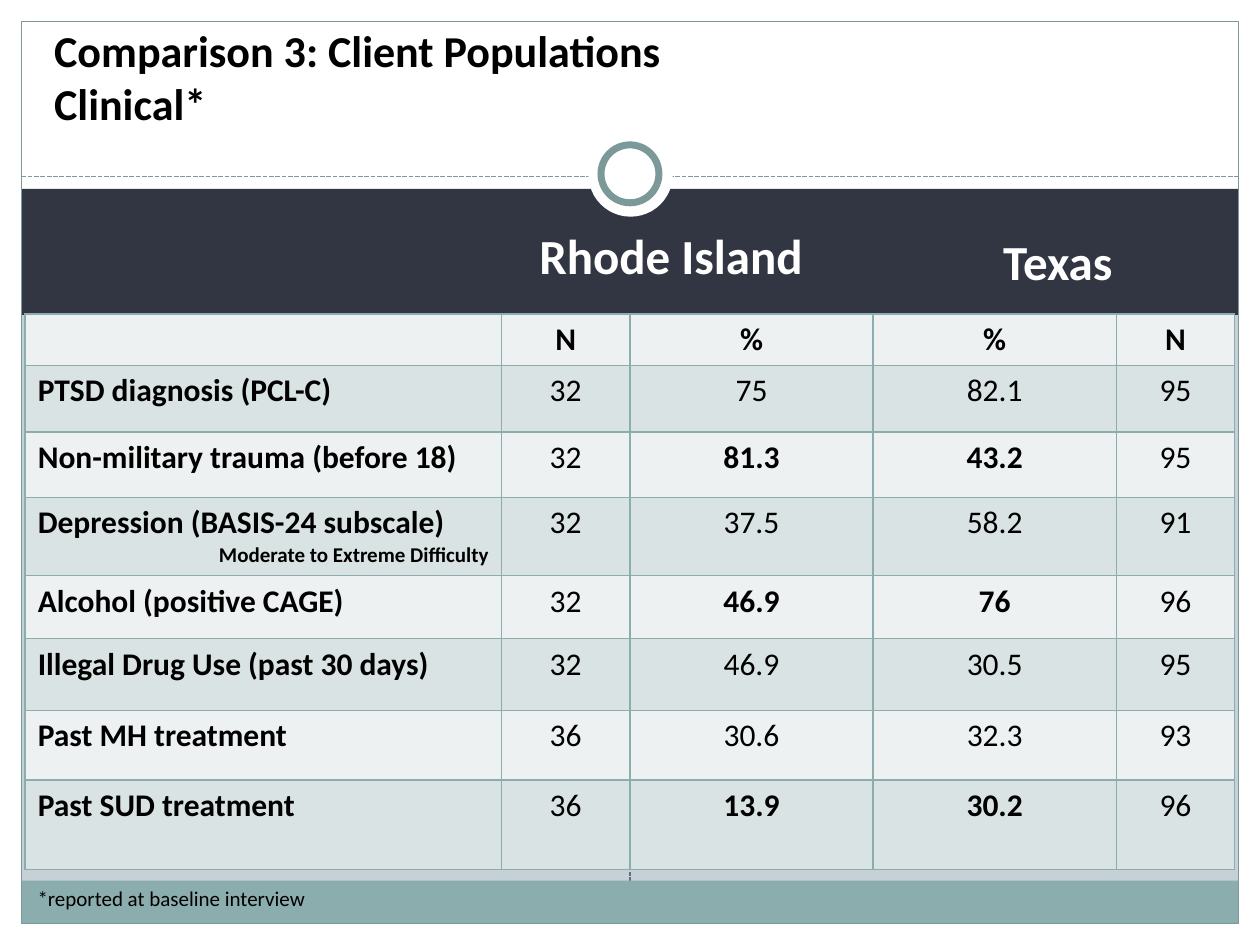
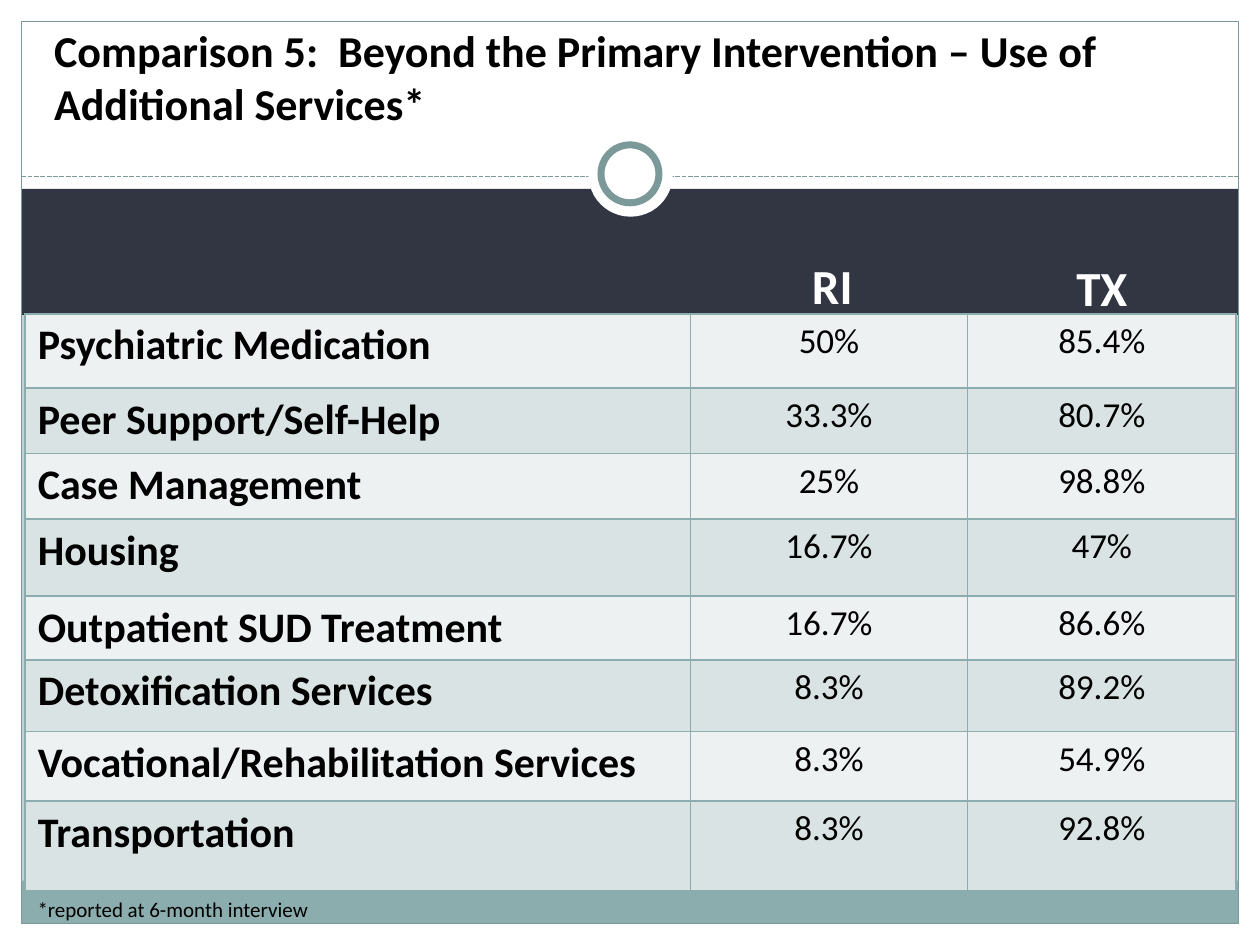
import dataclasses

import lxml.etree
import pptx
import pptx.dml.color
import pptx.enum.dml
import pptx.enum.shapes
import pptx.enum.text
import pptx.oxml.ns
import pptx.util

Inches = pptx.util.Inches
Pt = pptx.util.Pt
Shape = pptx.enum.shapes.MSO_SHAPE
Align = pptx.enum.text.PP_ALIGN
Anchor = pptx.enum.text.MSO_ANCHOR
AutoSize = pptx.enum.text.MSO_AUTO_SIZE
qn = pptx.oxml.ns.qn


@dataclasses.dataclass(frozen=True)
class Theme:
    font: str = "Calibri"
    background: str = "C5D1D7"
    white: str = "FFFFFF"
    ink: str = "000000"
    header: str = "323643"
    footer: str = "8CADAE"
    frame: str = "7C999A"
    divider: str = "646B86"
    bands: tuple = ("EEF1F2", "DAE3E3")
    title_size: float = 25.2
    heading_size: float = 28
    note_size: float = 12


def rgb(value):
    return pptx.dml.color.RGBColor.from_string(value)


def write(paragraph, text, *, font, size, color, bold=False, align=Align.LEFT):
    """Fill one paragraph; a newline in the text becomes a line break."""
    paragraph.text = text
    paragraph.alignment = align
    for run in paragraph.runs:
        run.font.name = font
        run.font.size = Pt(size)
        run.font.bold = bold
        run.font.color.rgb = rgb(color)


class Deck:
    """The style, the presentation and the slide being built."""

    MARGIN, WIDTH, HEIGHT = 0.17, 10, 7.5

    def __init__(self, theme):
        self.theme = theme
        self.prs = pptx.Presentation()
        self.prs.slide_width = Inches(self.WIDTH)
        self.prs.slide_height = Inches(self.HEIGHT)
        backdrop = self.prs.slide_master.background.fill
        backdrop.solid()
        backdrop.fore_color.rgb = rgb(theme.background)
        self.slide = None

    def new_slide(self):
        self.slide = self.prs.slides.add_slide(
            self.prs.slide_layouts.get_by_name("Comparison"))
        # Only the title and the two column headings are used
        for holder in list(self.slide.placeholders):
            if holder.placeholder_format.idx in (2, 4):
                holder.element.getparent().remove(holder.element)
        self.frame()

    def shape(self, kind, left, top, width, height, fill=None, line=None, weight=0.75):
        shape = self.slide.shapes.add_shape(
            kind, Inches(left), Inches(top), Inches(width), Inches(height))
        shape.shadow.inherit = False
        if fill:
            shape.fill.solid()
            shape.fill.fore_color.rgb = rgb(fill)
        else:
            shape.fill.background()
        if line:
            shape.line.color.rgb = rgb(line)
            shape.line.width = Pt(weight)
        else:
            shape.line.fill.background()
        return shape

    def dashed_line(self, x1, y1, x2, y2, color, weight):
        line = self.slide.shapes.add_connector(
            pptx.enum.shapes.MSO_CONNECTOR.STRAIGHT,
            Inches(x1), Inches(y1), Inches(x2), Inches(y2))
        line.line.color.rgb = rgb(color)
        line.line.width = Pt(weight)
        line.line.dash_style = pptx.enum.dml.MSO_LINE.SQUARE_DOT
        lxml.etree.SubElement(line.element.spPr, qn("a:effectLst"))
        return line

    def frame(self):
        """Margins, bands, border and ring that every slide shares."""
        theme, edge = self.theme, self.MARGIN
        right, bottom = self.WIDTH - edge, self.HEIGHT - edge
        inner = self.WIDTH - 2 * edge
        divider = self.dashed_line(5, 6.99, 5, 2.41, theme.divider, 0.75)
        # White title area and margins
        for box in ((0, 0, self.WIDTH, 1.58), (0, bottom, self.WIDTH, edge),
                    (0, 0, edge, self.HEIGHT), (right, 0, edge, self.HEIGHT)):
            self.shape(Shape.RECTANGLE, *box, fill=theme.white)
        # Coloured bands
        self.shape(Shape.RECTANGLE, edge, 1.5, inner, 1, fill=theme.header)
        footer = self.shape(Shape.RECTANGLE, edge, 6.99, inner, 0.34, fill=theme.footer)
        divider.begin_connect(footer, 0)
        # Border and ring
        self.dashed_line(edge, 1.4, right, 1.4, theme.frame, 0.9)
        self.shape(Shape.RECTANGLE, edge, edge, inner, bottom - edge, line=theme.frame)
        self.shape(Shape.OVAL, 4.67, 1.05, 0.67, 0.67, fill=theme.white)
        self.shape(Shape.OVAL, 4.77, 1.15, 0.46, 0.46,
                   fill=theme.white, line=theme.frame, weight=4)

    def placeholder(self, idx, text, box, anchor, **style):
        holder = next(p for p in self.slide.placeholders
                      if p.placeholder_format.idx == idx)
        holder.left, holder.top, holder.width, holder.height = map(Inches, box)
        holder.element.getparent().append(holder.element)  # above the frame
        holder.text_frame.auto_size = AutoSize.NONE
        holder.text_frame.vertical_anchor = anchor
        write(holder.text_frame.paragraphs[0], text,
              font=self.theme.font, bold=True, **style)

    def title(self, text):
        self.placeholder(0, text, (0.33, 0.25, 9.33, 0.83), Anchor.BOTTOM,
                         size=self.theme.title_size, color=self.theme.ink)

    def headings(self, *headings):
        for idx, (text, box) in zip((1, 3), headings):
            self.placeholder(idx, text, box, Anchor.MIDDLE, align=Align.CENTER,
                             size=self.theme.heading_size, color=self.theme.white)

    def footnote(self, text, top, width):
        note = self.slide.shapes.add_textbox(
            Inches(0.2), Inches(top), Inches(width), Inches(0.3))
        note.text_frame.word_wrap = True
        note.text_frame.auto_size = AutoSize.SHAPE_TO_FIT_TEXT
        write(note.text_frame.paragraphs[0], text, font=self.theme.font,
              size=self.theme.note_size, color=self.theme.ink)

    def cell_borders(self, cell):
        properties = cell._tc.get_or_add_tcPr()
        for side in ("a:lnL", "a:lnR", "a:lnT", "a:lnB"):
            border = lxml.etree.SubElement(properties, qn(side), w=str(Pt(1)))
            fill = lxml.etree.SubElement(border, qn("a:solidFill"))
            lxml.etree.SubElement(fill, qn("a:srgbClr"), val=self.theme.footer)

    def table(self, rows, widths, heights, label_size, value_size, is_bold):
        """Banded table; a second line in a label is a small right-hand note."""
        theme = self.theme
        table = self.slide.shapes.add_table(
            len(rows), len(widths), Inches(0.2), Inches(2.49),
            Inches(sum(widths)), Inches(sum(heights))).table
        table.first_row = table.horz_banding = False
        for column, width in zip(table.columns, widths):
            column.width = Inches(width)
        for r, (values, height) in enumerate(zip(rows, heights)):
            table.rows[r].height = Inches(height)
            for c, value in enumerate(values):
                cell = table.cell(r, c)
                self.cell_borders(cell)
                cell.fill.solid()
                cell.fill.fore_color.rgb = rgb(theme.bands[r % 2])
                text, _, note = value.partition("\n")
                write(cell.text_frame.paragraphs[0], text, font=theme.font,
                      size=value_size if c else label_size, color=theme.ink,
                      bold=c == 0 or is_bold(r, c),
                      align=Align.CENTER if c else Align.LEFT)
                if note:
                    write(cell.text_frame.add_paragraph(), note, font=theme.font,
                          size=theme.note_size, color=theme.ink, bold=True,
                          align=Align.RIGHT)


CLINICAL = [
    ("", "N", "%", "%", "N"),
    ("PTSD diagnosis (PCL-C)", "32", "75", "82.1", "95"),
    ("Non-military trauma (before 18)", "32", "81.3", "43.2", "95"),
    ("Depression (BASIS-24 subscale)\nModerate to Extreme Difficulty",
     "32", "37.5", "58.2", "91"),
    ("Alcohol (positive CAGE)", "32", "46.9", "76", "96"),
    ("Illegal Drug Use (past 30 days)", "32", "46.9", "30.5", "95"),
    ("Past MH treatment", "36", "30.6", "32.3", "93"),
    ("Past SUD treatment", "36", "13.9", "30.2", "96"),
]
CONTRASTING_ROWS = (2, 4, 7)

SERVICES = [
    ("Psychiatric Medication", "50%", "85.4%"),
    ("Peer Support/Self-Help", "33.3%", "80.7%"),
    ("Case Management", "25%", "98.8%"),
    ("Housing", "16.7%", "47%"),
    ("Outpatient SUD Treatment", "16.7%", "86.6%"),
    ("Detoxification Services", "8.3%", "89.2%"),
    ("Vocational/Rehabilitation Services", "8.3%", "54.9%"),
    ("Transportation", "8.3%", "92.8%"),
]


def main():
    deck = Deck(Theme())

    # Client populations
    deck.new_slide()
    deck.headings(("Rhode Island", (3.76, 1.62, 3.13, 0.8)),
                  ("Texas", (7.13, 1.67, 2.53, 0.8)))
    deck.title("Comparison 3: Client Populations\nClinical*")
    deck.footnote("*reported at baseline interview", 6.98, 6.54)
    deck.table(CLINICAL, (3.78, 1.02, 1.93, 1.93, 0.94),
               (0.41, 0.53, 0.52, 0.62, 0.5, 0.57, 0.55, 0.71), 18, 18,
               lambda r, c: r == 0 or (r in CONTRASTING_ROWS and c in (2, 3)))

    # Additional services
    deck.new_slide()
    deck.headings(("RI", (5.39, 1.94, 2.43, 0.64)),
                  ("TX", (7.99, 1.98, 1.51, 0.59)))
    deck.title("Comparison 5:  Beyond the Primary Intervention – Use of "
               "Additional Services*")
    deck.table(SERVICES, (5.28, 2.2, 2.13),
               (0.59, 0.52, 0.52, 0.61, 0.5, 0.57, 0.55, 0.71), 24, 20,
               lambda r, c: False)
    deck.footnote("*reported at 6-month interview", 7.07, 5.2)

    deck.prs.save("out.pptx")


if __name__ == "__main__":
    main()
